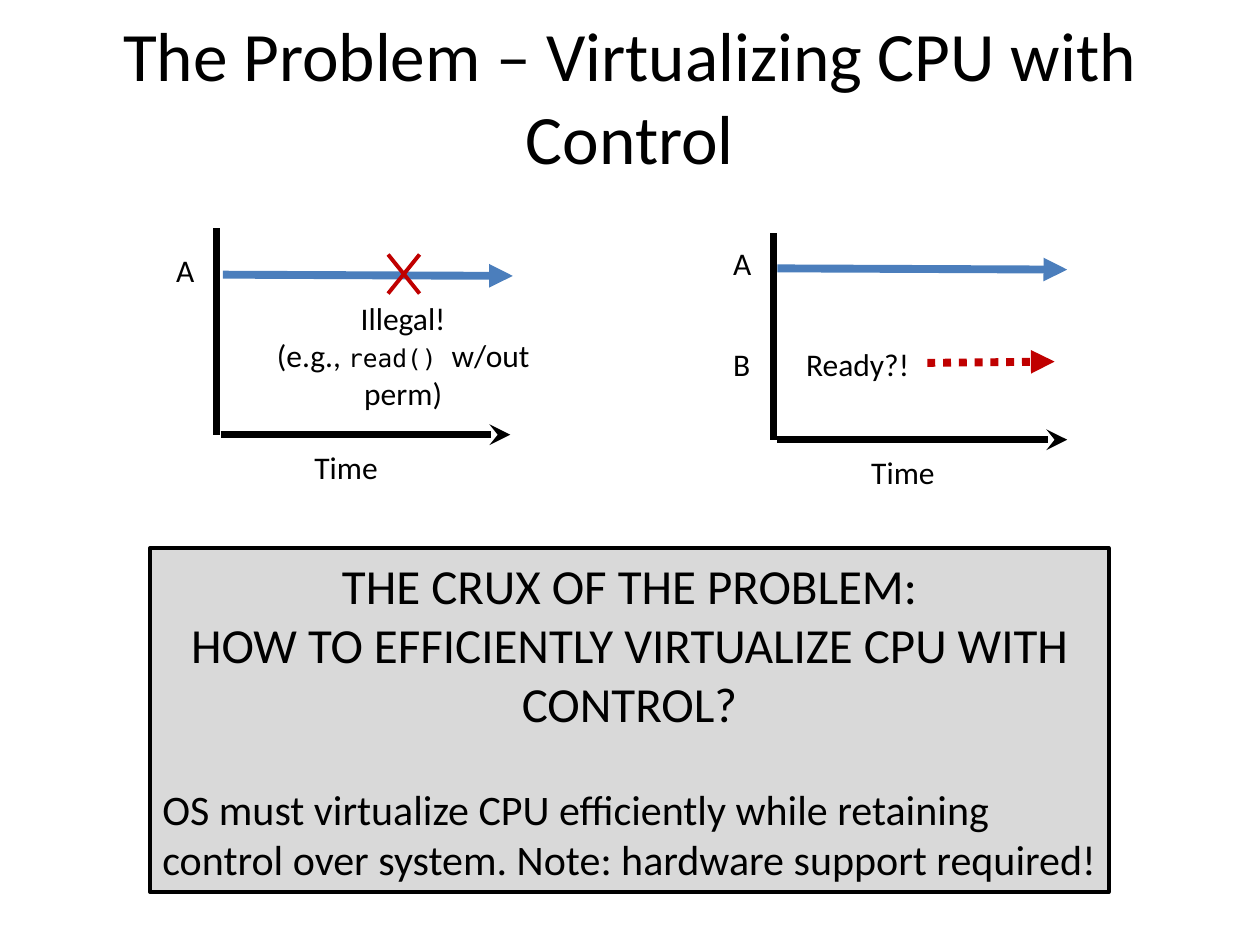
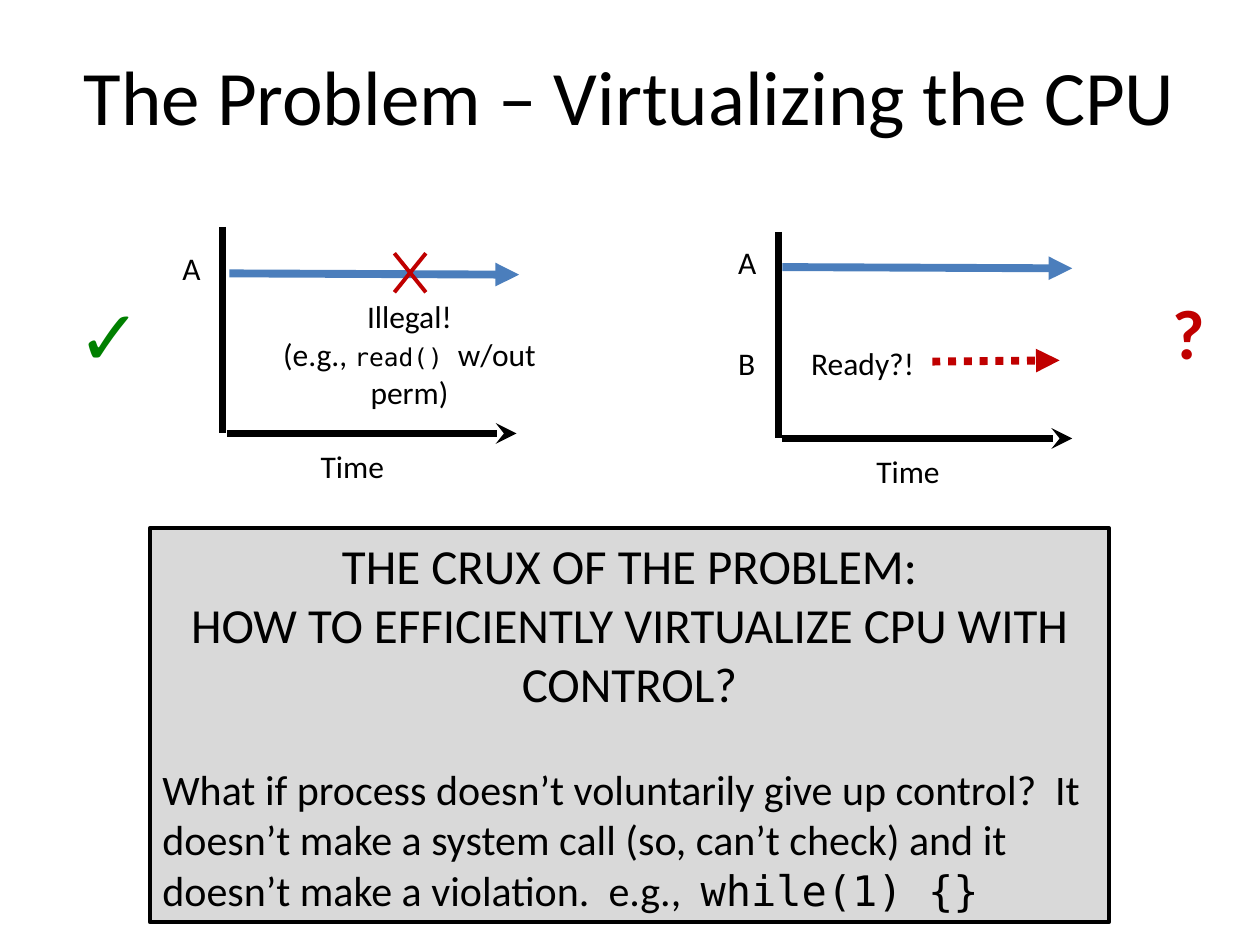
from pptx import Presentation
from pptx.dml.color import RGBColor as Rgb
from pptx.enum.dml import MSO_LINE as Dash
from pptx.enum.shapes import MSO_CONNECTOR as Link, MSO_SHAPE as Form
from pptx.enum.text import MSO_ANCHOR as Anchor, MSO_AUTO_SIZE as Fit, PP_ALIGN as Align
from pptx.oxml.ns import qn
from pptx.util import Inches, Pt
from lxml.etree import SubElement

COLORS = {"ink": "000000", "panel": "D9D9D9", "run": "4B7EBC",
          "alert": "C00000", "good": "008000"}
SANS, MONO = "Calibri", "DejaVu Sans Mono"


class Deck:
    """Holds the shared style and the slide being drawn."""

    def __init__(self):
        self.prs = Presentation()
        self.prs.slide_width, self.prs.slide_height = Inches(10), Inches(7.5)
        self.slide = None

    def color(self, name):
        return Rgb.from_string(COLORS[name])

    def start(self, title, size):
        self.slide = self.prs.slides.add_slide(self.prs.slide_layouts[6])
        box = self.text(title, 0.5, 0.13, 9, 1.25, size, align=Align.CENTER, wrap=True)
        box.text_frame.auto_size = Fit.NONE
        box.text_frame.vertical_anchor = Anchor.MIDDLE

    def style(self, para, parts, size, color="ink", align=Align.LEFT, bold=None, code=None):
        para.alignment = align
        font = para.font
        font.name, font.size, font.bold = SANS, Pt(size), bold
        font.color.rgb = self.color(color)
        for i, part in enumerate(parts):
            run = para.add_run()
            run.text = part
            if i % 2:
                run.font.name, run.font.size = MONO, Pt(code)

    def text(self, words, x, y, w, h, size=18, wrap=False, **look):
        box = self.slide.shapes.add_textbox(*map(Inches, (x, y, w, h)))
        frame = box.text_frame
        frame.word_wrap, frame.auto_size = wrap, Fit.SHAPE_TO_FIT_TEXT
        self.style(frame.paragraphs[0], [words], size, **look)
        return box

    def line(self, x1, y1, x2, y2, color="ink", width=4, head=None, dash=None):
        link = self.slide.shapes.add_connector(
            Link.STRAIGHT, *map(Inches, (x1, y1, x2, y2)))
        link.line.color.rgb = self.color(color)
        link.line.width = Pt(width)
        if dash:
            link.line.dash_style = dash
        if head:
            SubElement(link.line._get_or_add_ln(), qn("a:tailEnd"), type=head)
        SubElement(link._element.spPr, qn("a:effectLst"))

    def plot(self, x, y, gap, run):
        self.line(x, y, x, y + 1.64)
        self.line(x + 0.03, y + 1.64, x + 2.33, y + 1.64, head="stealth")
        self.text("A", x - 0.42, y + run - 0.24, 0.44, 0.5)
        self.text("Time ", x + 0.67, y + 1.7, 0.77, 0.4, align=Align.CENTER)
        self.line(x + gap, y + run, x + gap + 2.3, y + run + 0.01,
                  "run", 4.5, "triangle")

    def fault(self, x, y):
        self.plot(x, y, 0.05, 0.37)
        note = self.text("Illegal!", x + 0.1, y + 0.51, 2.76, 0.71,
                         align=Align.CENTER, wrap=True)
        self.style(note.text_frame.add_paragraph(), ["(e.g., ", "read() ", "w/out perm)"],
                   18, align=Align.CENTER, code=14)
        left, right, top, low = x + 1.36, x + 1.61, y + 0.21, y + 0.52
        self.line(right, top, left, low, "alert", 2.25)
        self.line(right, low, left, top, "alert", 2.25)

    def wait(self, x, y):
        self.plot(x, y, 0.03, 0.28)
        self.text("B", x - 0.42, y + 0.84, 0.42, 0.5)
        self.text("Ready?!", x + 0.16, y + 0.84, 1.03, 0.4)
        self.line(x + 1.22, y + 1.03, x + 2.23, y + 1.02, "alert", 4.5,
                  "triangle", Dash.ROUND_DOT)

    def crux(self, y, h, *parts):
        box = self.slide.shapes.add_shape(
            Form.RECTANGLE, *map(Inches, (1.19, y, 7.61, h)))
        box.shadow.inherit = False
        box.fill.solid()
        box.fill.fore_color.rgb = self.color("panel")
        box.line.color.rgb = self.color("ink")
        box.line.width = Pt(2.25)
        frame = box.text_frame
        frame.word_wrap, frame.auto_size = True, Fit.SHAPE_TO_FIT_TEXT
        self.style(frame.paragraphs[0], ["THE CRUX OF THE PROBLEM:"], 28, align=Align.CENTER)
        self.style(frame.add_paragraph(), ["HOW TO EFFICIENTLY VIRTUALIZE CPU WITH CONTROL?"],
                   28, align=Align.CENTER)
        body = frame.add_paragraph()
        self.style(body, parts, 24, code=24)
        body.space_before = Pt(29.3)


def main():
    deck = Deck()

    deck.start("The Problem – Virtualizing CPU with Control", 39.6)
    deck.crux(4.35, 2.73, "OS must virtualize CPU efficiently while retaining "
              "control over system. Note: hardware support required!")
    deck.wait(6.14, 1.85)
    deck.fault(1.72, 1.81)

    deck.start("The Problem – Virtualizing the CPU", 44)
    deck.crux(4.19, 3.13, "What if process doesn’t voluntarily give up control?  It "
              "doesn’t make a system call (so, can’t check) and it doesn’t make "
              "a violation.  e.g.,  ", "while(1) {}")
    deck.wait(6.18, 1.84)
    deck.fault(1.77, 1.8)
    deck.text("✓", 0.52, 2.24, 0.69, 0.84, 44, color="good", bold=True)
    deck.text("?", 9.21, 2.25, 0.46, 0.77, 40, color="alert", bold=True)

    deck.prs.save("out.pptx")


if __name__ == "__main__":
    main()
